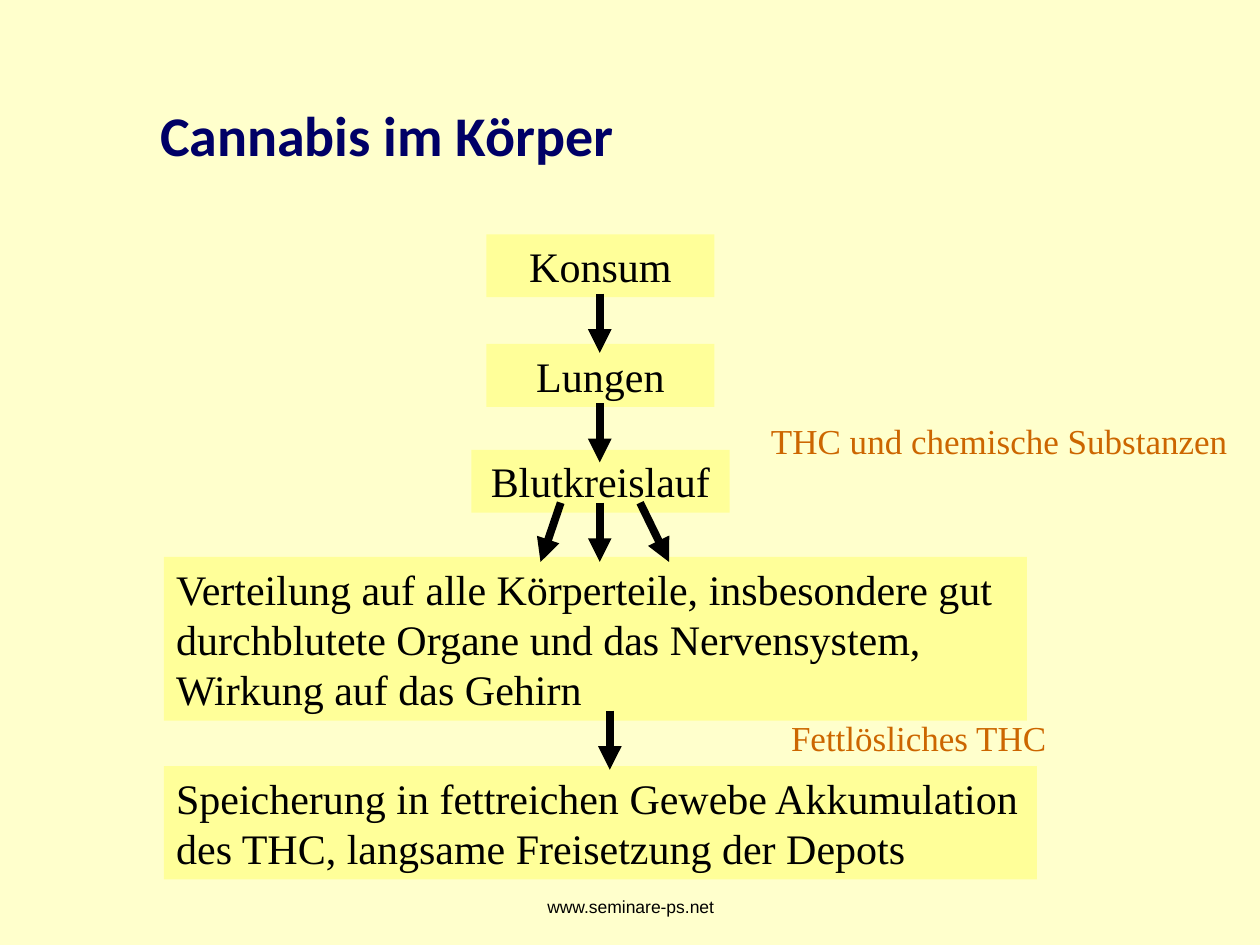
from lxml import etree
from pptx import Presentation
from pptx.dml.color import RGBColor
from pptx.enum import shapes, text
from pptx.oxml import ns
from pptx.util import Inches, Pt

COLORS = {
    "background": "FFFFCC",
    "title": "000066",
    "step": "FFFF99",
    "ink": "000000",
    "note": "CC6600",
}
SERIF = "Times New Roman"
LEFT, CENTER = text.PP_ALIGN.LEFT, text.PP_ALIGN.CENTER
TITLE = "Cannabis im Körper"
FOOTER = "www.seminare-ps.net"
STEPS = [
    ("Konsum", (3.86, 1.86, 1.81, 0.5), CENTER),
    ("Lungen", (3.86, 2.73, 1.81, 0.5), CENTER),
    ("Blutkreislauf", (3.74, 3.57, 2.05, 0.5), CENTER),
    ("Verteilung auf alle Körperteile, insbesondere gut durchblutete Organe "
     "und das Nervensystem, Wirkung auf das Gehirn", (1.3, 4.42, 6.85, 1.3), LEFT),
    ("Speicherung in fettreichen Gewebe Akkumulation des THC, langsame "
     "Freisetzung der Depots", (1.3, 6.08, 6.93, 0.9), LEFT),
]
NOTES = [
    ("THC und chemische Substanzen", (6.02, 3.28, 3.98, 0.43)),
    ("Fettlösliches THC", (6.18, 5.64, 3.47, 0.43)),
]
ARROW_DROP = 0.47
ARROWS = [
    (4.76, 4.76, 2.33),
    (4.76, 4.76, 3.2),
    (4.76, 4.76, 3.99),
    (5.08, 5.31, 3.99),
    (4.45, 4.29, 3.99),
    (4.84, 4.84, 5.64),
]


def rgb(name):
    return RGBColor.from_string(COLORS[name])


def write(shape, words, font, size, color, align=LEFT, bold=False,
          anchor=text.MSO_ANCHOR.TOP):
    frame = shape.text_frame
    frame.word_wrap = True
    frame.vertical_anchor = anchor
    frame.text = words
    paragraph = frame.paragraphs[0]
    paragraph.alignment = align
    paragraph.font.name = font
    paragraph.font.size = Pt(size)
    paragraph.font.bold = bold
    paragraph.font.color.rgb = rgb(color)


def add_step(slide, words, box, align):
    step = slide.shapes.add_shape(shapes.MSO_SHAPE.RECTANGLE, *map(Inches, box))
    step.shadow.inherit = False
    step.fill.solid()
    step.fill.fore_color.rgb = rgb("step")
    step.line.fill.background()
    write(step, words, SERIF, 24, "ink", align)


def add_label(slide, words, box, *style):
    label = slide.shapes.add_textbox(*map(Inches, box))
    write(label, words, *style)


def add_arrow(slide, start_x, end_x, top):
    ends = (start_x, top, end_x, top + ARROW_DROP)
    arrow = slide.shapes.add_connector(
        shapes.MSO_CONNECTOR.STRAIGHT, *map(Inches, ends))
    arrow.line.color.rgb = rgb("ink")
    arrow.line.width = Pt(4.5)
    outline = arrow.line._get_or_add_ln()
    etree.SubElement(outline, ns.qn("a:tailEnd"), type="triangle")
    etree.SubElement(arrow._element.spPr, ns.qn("a:effectLst"))


def main():
    deck = Presentation()
    deck.slide_width, deck.slide_height = Inches(10), Inches(7.5)
    slide = deck.slides.add_slide(deck.slide_layouts[5])
    slide.background.fill.solid()
    slide.background.fill.fore_color.rgb = rgb("background")

    title = slide.shapes.title
    title.left, title.top, title.width, title.height = map(
        Inches, (1.17, 0.44, 8.4, 1.25))
    write(title, TITLE, "Calibri", 32, "title", bold=True,
          anchor=text.MSO_ANCHOR.MIDDLE)

    add_label(slide, FOOTER, (3.42, 7.06, 3.17, 0.28), "Arial", 10, "ink", CENTER)
    for step in STEPS:
        add_step(slide, *step)
    for arrow in ARROWS:
        add_arrow(slide, *arrow)
    for words, box in NOTES:
        add_label(slide, words, box, SERIF, 20, "note")
    deck.save("out.pptx")


if __name__ == "__main__":
    main()
